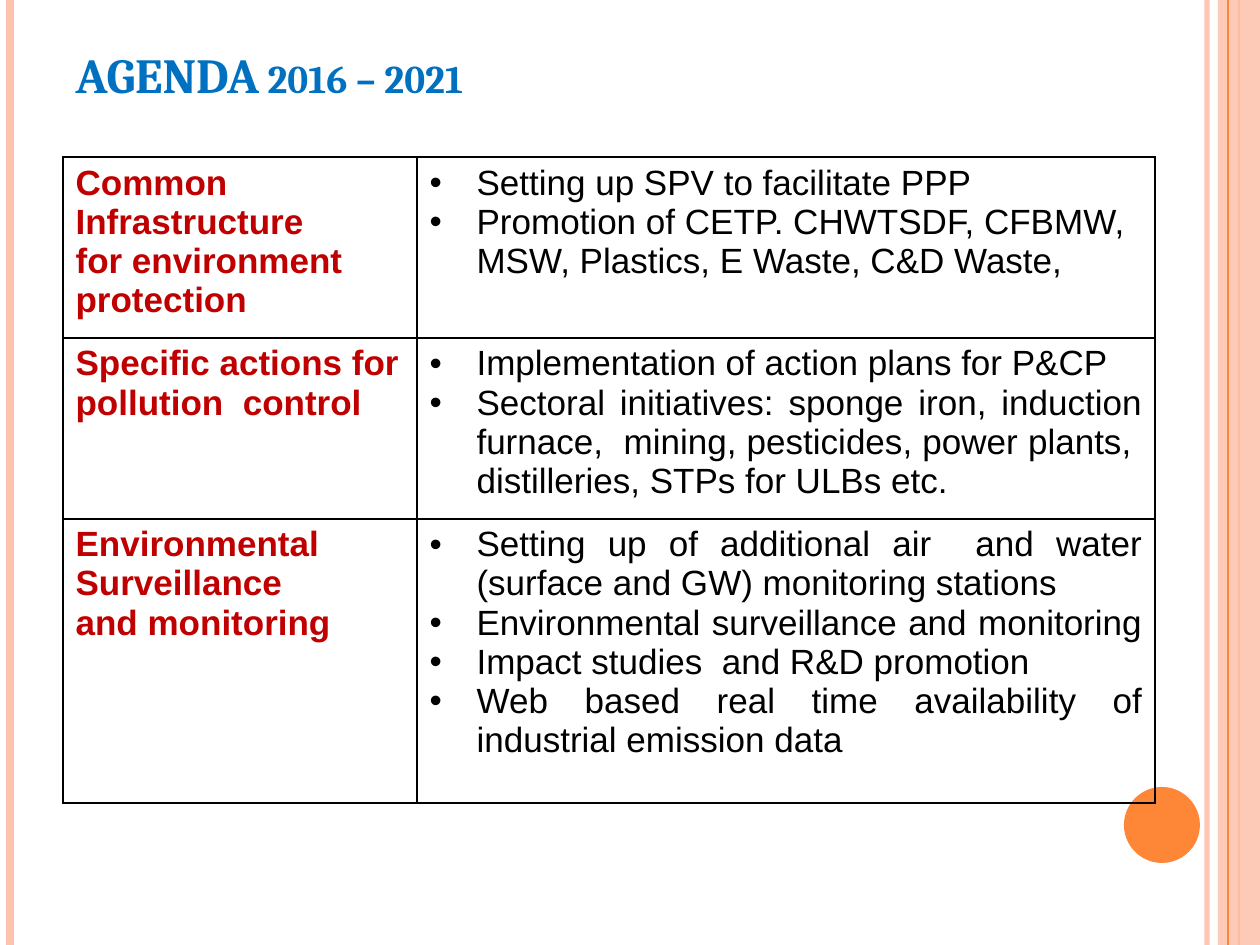
from dataclasses import dataclass

from lxml.etree import SubElement
from pptx import Presentation
from pptx.dml.color import RGBColor
from pptx.enum.shapes import MSO_CONNECTOR, MSO_SHAPE
from pptx.enum.text import MSO_ANCHOR, MSO_AUTO_SIZE, PP_ALIGN
from pptx.oxml.ns import qn
from pptx.util import Emu, Pt

PX = 914400 / 126
WIDTH, HEIGHT = 1260, 945


def px(n):
    return Emu(round(n * PX))


@dataclass(frozen=True)
class Theme:
    title: str = "0070C0"
    topic: str = "C00000"
    text: str = "000000"
    peach: str = "FEC3AE"
    orange: str = "FE8637"
    title_font: str = "Cambria"
    body_font: str = "Arial"
    title_size: int = 28
    body_size: int = 20


class SlideBuilder:
    def __init__(self, prs, theme):
        self.theme = theme
        self.s = prs.slides.add_slide(prs.slide_layouts[5])

    def set_alpha(self, fill, percent):
        color = fill.find(".//" + qn("a:srgbClr"))
        SubElement(color, qn("a:alpha"), val=str(percent * 1000))

    def set_indent(self, p, indent):
        pPr = p._p.get_or_add_pPr()
        pPr.set("marL", str(px(indent)))
        pPr.set("indent", str(-px(indent)))
        return pPr

    def format_runs(self, p, font, size, color, bold):
        for r in p.runs:
            r.font.name = font
            r.font.size = Pt(size)
            r.font.bold = bold
            r.font.color.rgb = RGBColor.from_string(color)

    def title(self, text, x, y, w, h):
        sp = self.s.shapes.title
        sp.left, sp.top, sp.width, sp.height = map(px, (x, y, w, h))
        tf = sp.text_frame
        tf.text = text
        tf.vertical_anchor = MSO_ANCHOR.MIDDLE
        tf.auto_size = MSO_AUTO_SIZE.SHAPE_TO_FIT_TEXT
        p = tf.paragraphs[0]
        p.alignment = PP_ALIGN.LEFT
        self.set_indent(p, 54)
        t = self.theme
        self.format_runs(p, t.title_font, t.title_size, t.title, True)
        p.runs[0].font._element.set("cap", "small")

    def stripe(self, x, color, weight, alpha=100):
        line = self.s.shapes.add_connector(
            MSO_CONNECTOR.STRAIGHT, px(x), 0, px(x), px(HEIGHT))
        line.line.color.rgb = RGBColor.from_string(color)
        line.line.width = Pt(weight)
        spPr = line._element.spPr
        SubElement(spPr, qn("a:effectLst"))
        if alpha < 100:
            self.set_alpha(spPr, alpha)

    def shape(self, kind, x, y, w, h, color, alpha=100):
        sp = self.s.shapes.add_shape(kind, *map(px, (x, y, w, h)))
        sp.shadow.inherit = False
        sp.fill.solid()
        sp.fill.fore_color.rgb = RGBColor.from_string(color)
        sp.line.fill.background()
        if alpha < 100:
            self.set_alpha(sp._element.spPr, alpha)

    def border(self, cell):
        tcPr = cell._tc.get_or_add_tcPr()
        for i, side in enumerate(("lnL", "lnR", "lnT", "lnB")):
            ln = SubElement(tcPr, qn("a:" + side), w=str(Pt(1)))
            fill = SubElement(ln, qn("a:solidFill"))
            SubElement(fill, qn("a:srgbClr"), val=self.theme.text)
            tcPr.insert(i, ln)

    def fill_cell(self, cell, lines, color, bold=False, bullets=False,
                  align=PP_ALIGN.LEFT):
        cell.fill.background()
        self.border(cell)
        tf = cell.text_frame
        tf.text = "\n".join(lines)
        for p in tf.paragraphs:
            p.alignment = align
            if bullets:
                pPr = self.set_indent(p, 47)
                SubElement(pPr, qn("a:buFont"), typeface=self.theme.body_font)
                SubElement(pPr, qn("a:buChar"), char="•")
            self.format_runs(p, self.theme.body_font, self.theme.body_size,
                             color, bold)

    def table(self, x, y, cols, rows, agenda):
        frame = self.s.shapes.add_table(
            len(rows), len(cols), px(x), px(y), px(sum(cols)), px(sum(rows)))
        tbl = frame.table
        tbl.first_row = tbl.horz_banding = False
        for col, w in zip(tbl.columns, cols):
            col.width = px(w)
        for row, h in zip(tbl.rows, rows):
            row.height = px(h)
        for i, (topic, actions, align) in enumerate(agenda):
            self.fill_cell(tbl.cell(i, 0), topic, self.theme.topic, bold=True)
            self.fill_cell(tbl.cell(i, 1), actions, self.theme.text,
                           bullets=True, align=align)


AGENDA = [
    (["Common", "Infrastructure", "for environment", "protection"],
     ["Setting up SPV to facilitate PPP",
      "Promotion of CETP. CHWTSDF, CFBMW, MSW, Plastics, E Waste, C&D Waste,"],
     PP_ALIGN.LEFT),
    (["Specific actions for pollution  control"],
     ["Implementation of action plans for P&CP",
      "Sectoral initiatives: sponge iron, induction furnace,  mining, "
      "pesticides, power plants,  distilleries, STPs for ULBs etc. "],
     PP_ALIGN.JUSTIFY),
    (["Environmental", "Surveillance", "and monitoring"],
     ["Setting up of additional air  and water (surface and GW) "
      "monitoring stations ",
      "Environmental surveillance and monitoring ",
      "Impact studies  and R&D promotion",
      "Web based real time availability of industrial emission data"],
     PP_ALIGN.JUSTIFY),
]


def main():
    prs = Presentation()
    prs.slide_width, prs.slide_height = px(WIDTH), px(HEIGHT)
    theme = Theme()
    b = SlideBuilder(prs, theme)
    b.stripe(1207, theme.peach, 3, alpha=93)
    b.stripe(10, theme.peach, 4.5)
    b.stripe(1239, theme.orange, 1.5)
    b.shape(MSO_SHAPE.RECTANGLE, 1218, 0, 42, HEIGHT, theme.peach, alpha=87)
    b.stripe(1228, theme.orange, 0.75)
    b.shape(MSO_SHAPE.OVAL, 1124, 787, 76, 76, theme.orange)
    b.title("AGENDA 2016 – 2021", 63, 38, 1134, 72)
    b.table(63, 157, [354, 738], [181, 181, 284], AGENDA)
    prs.save("out.pptx")


if __name__ == "__main__":
    main()
